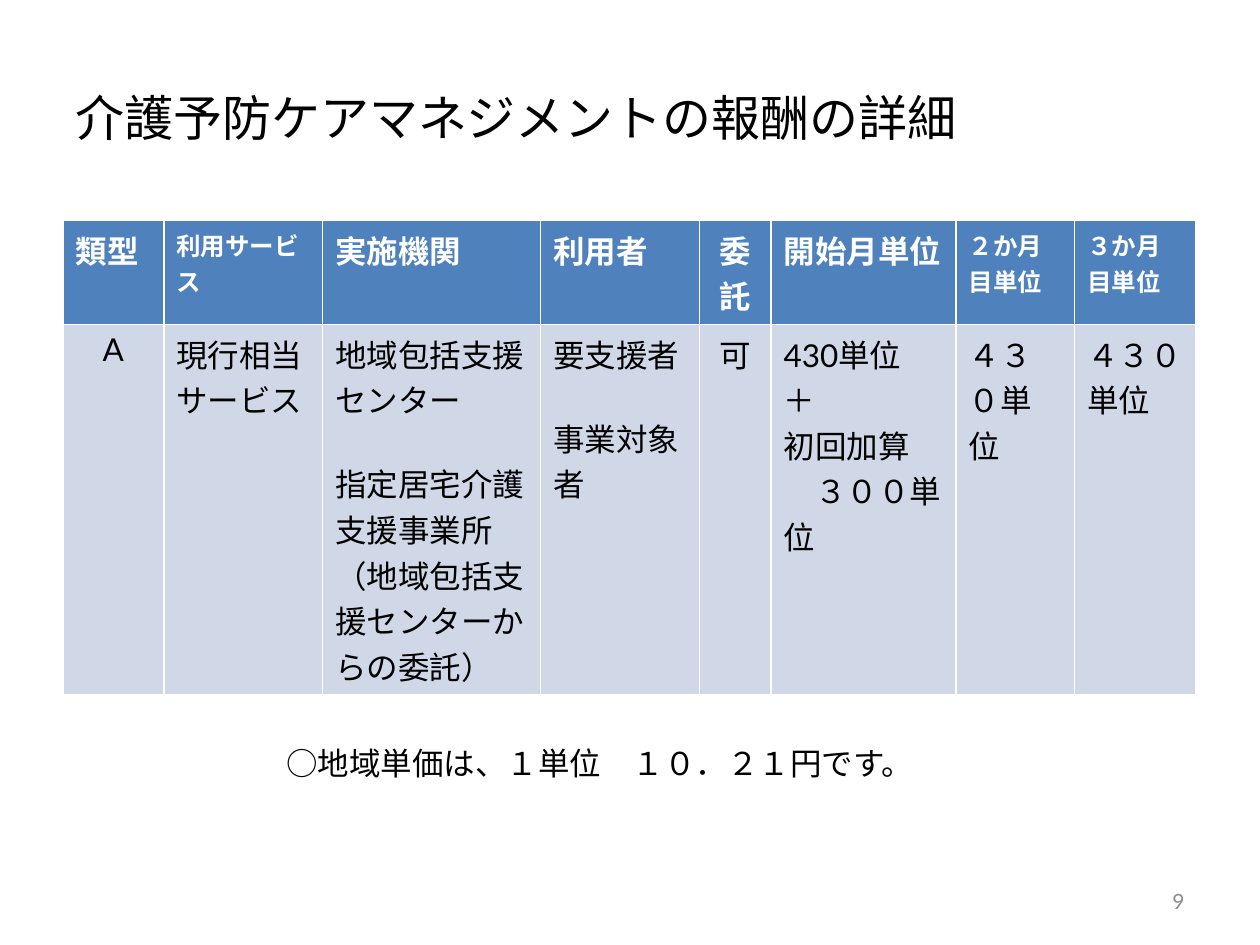
from pptx import Presentation
from pptx.dml.color import RGBColor
from pptx.enum.text import MSO_ANCHOR, PP_ALIGN
from pptx.util import Inches, Pt

HUE = {"ink": "000000", "white": "FFFFFF", "head": "4F81BD", "body": "D0D8E8", "gray": "8C8C8C"}
MID, LEFT, RIGHT = PP_ALIGN.CENTER, PP_ALIGN.LEFT, PP_ALIGN.RIGHT

deck = Presentation()
deck.slide_width, deck.slide_height = Inches(10), Inches(7.5)
wide, high = deck.slide_width, deck.slide_height
slide = deck.slides.add_slide(deck.slide_layouts[5])


def write(frame, lines, size, hue, align=LEFT, bold=False, gap=0):
    frame.word_wrap = True
    for i, line in enumerate(lines):
        par = frame.paragraphs[0] if i == 0 else frame.add_paragraph()
        par.alignment = align
        if i and gap:
            par.space_before = Pt(gap)
        run = par.add_run()
        run.text = line
        look = {"name": "Lato", "size": Pt(size), "bold": bold}
        for key, val in look.items():
            setattr(run.font, key, val)
        run.font.color.rgb = RGBColor.from_string(HUE[hue])


def place(shape, x, y, w, h):
    spot = {"left": x * wide, "top": y * high, "width": w * wide, "height": h * high}
    for key, val in spot.items():
        setattr(shape, key, int(val))
    shape.text_frame.vertical_anchor = MSO_ANCHOR.MIDDLE


title = slide.shapes.title
place(title, 0.05, 0.04, 0.9, 1 / 6)
write(title.text_frame, ["介護予防ケアマネジメントの報酬の詳細"], 28, "ink")

cols = [
    (0.8, "類型", 18, ["A"], LEFT, MID, 0),
    (1.26, "利用サービス", 14, ["現行相当サービス"], LEFT, LEFT, 0),
    (1.73, "実施機関", 18, ["地域包括支援センター", "指定居宅介護支援事業所（地域包括支援センターからの委託）"], LEFT, LEFT, 22),
    (1.26, "利用者", 18, ["要支援者", "事業対象者"], LEFT, LEFT, 22),
    (0.57, "委託", 18, ["可"], MID, MID, 0),
    (1.47, "開始月単位", 18, ["430単位", "＋", "初回加算", "　３００単位"], LEFT, LEFT, 0),
    (0.94, "２か月目単位", 14, ["４３０単位"], LEFT, LEFT, 0),
    (0.96, "３か月目単位", 14, ["４３０単位"], LEFT, LEFT, 0),
]
rows = [0.8, 2.94]
grid = slide.shapes.add_table(
    len(rows), len(cols), int(0.05 * wide), int(high * 7 / 30), int(0.9 * wide), Inches(sum(rows))
).table
for row, tall in zip(grid.rows, rows):
    row.height = Inches(tall)
for c, (span, head, size, body, top, low, gap) in enumerate(cols):
    grid.columns[c].width = Inches(span)
    write(grid.cell(0, c).text_frame, [head], size, "white", top, True)
    write(grid.cell(1, c).text_frame, body, 18, "ink", low, False, gap)
    for r, hue in enumerate(["head", "body"]):
        fill = grid.cell(r, c).fill
        fill.solid()
        fill.fore_color.rgb = RGBColor.from_string(HUE[hue])

notes = [
    ("9", 12, "gray", RIGHT, (0.717, 0.927, 0.233, 0.053)),
    ("○地域単価は、１単位　１０．２１円です。", 18, "ink", MID, (0.169, 0.741, 0.614, 0.133)),
]
for text, size, hue, align, spot in notes:
    box = slide.shapes.add_textbox(0, 0, 0, 0)
    place(box, *spot)
    write(box.text_frame, [text], size, hue, align)

deck.save("out.pptx")
